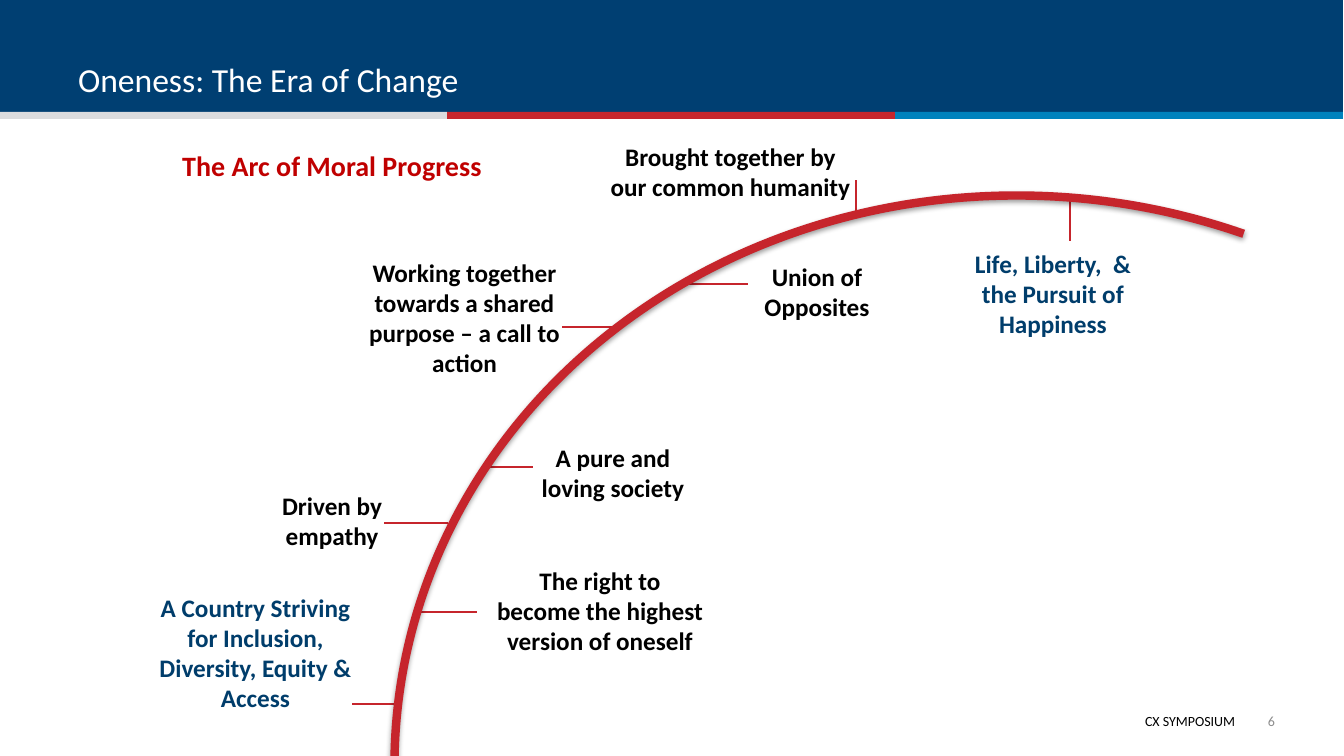
import lxml.etree
import pptx
import pptx.dml.color
import pptx.enum.shapes
import pptx.enum.text
import pptx.oxml
import pptx.oxml.ns
import pptx.util

PX = 914400 / 100.8
SHAPE = pptx.enum.shapes.MSO_SHAPE
ALIGN = pptx.enum.text.PP_ALIGN
ANCHOR = pptx.enum.text.MSO_ANCHOR
FIT = pptx.enum.text.MSO_AUTO_SIZE
RGB = pptx.dml.color.RGBColor.from_string

THEME = {
    "font": "Calibri",
    "header": RGB("003F72"),
    "stripes": [RGB("DBDCDE"), RGB("C6262D"), RGB("0082BD")],
    "arc": RGB("C6252C"),
    "heading": RGB("C00000"),
    "value": RGB("000000"),
    "ideal": RGB("003D6B"),
    "white": RGB("FFFFFF"),
    "number": RGB("8C8C8C"),
    "title_size": 24,
    "heading_size": 20,
    "label_size": 18,
    "footer_size": 10,
}


def px(*lengths):
    return [pptx.util.Emu(round(length * PX)) for length in lengths]


def write(holder, text, size, color, align, bold=False):
    frame = holder.text_frame
    frame.word_wrap = True
    frame.text = text
    paragraph = frame.paragraphs[0]
    paragraph.alignment = align
    paragraph.font.name = THEME["font"]
    paragraph.font.size = pptx.util.Pt(size)
    paragraph.font.bold = bold
    paragraph.font.color.rgb = color
    return frame


deck = pptx.Presentation()
deck.slide_width, deck.slide_height = px(1344, 756)
slide = deck.slides.add_slide(deck.slide_layouts[5])
shapes = slide.shapes

bands = [(-1, 0, 1344, 115, THEME["header"])]
for index, color in enumerate(THEME["stripes"]):
    bands.append((-1 + 448 * index, 112, 448, 7, color))
for left, top, width, height, color in bands:
    band = shapes.add_shape(SHAPE.RECTANGLE, *px(left, top, width, height))
    band.shadow.inherit = False
    band.fill.solid()
    band.fill.fore_color.rgb = color
    band.line.fill.background()

title = shapes.title
title.left, title.top, title.width, title.height = px(68, 14, 1210, 90)
title_frame = write(title, "Oneness: The Era of Change", THEME["title_size"], THEME["white"], ALIGN.LEFT)
title_frame.auto_size = FIT.NONE
title_frame.vertical_anchor = ANCHOR.BOTTOM
shapes._spTree.append(title._element)

milestones = [
    ("A Country Striving for Inclusion, Diversity, Equity & Access", "ideal", (136, 587, 239, 132), (399, 704, 352, 704)),
    ("The right to become the highest version of oneself", "value", (487, 560, 226, 102), (477, 612, 413, 612)),
    ("Driven by empathy", "value", (255, 485, 154, 72), (448, 523, 384, 523)),
    ("A pure and loving society", "value", (512, 437, 202, 72), (533, 467, 486, 467)),
    ("Working together towards a shared purpose – a call to action", "value", (354, 252, 221, 132), (613, 327, 562, 327)),
    ("Union of Opposites", "value", (740, 256, 154, 72), (748, 284, 684, 284)),
    ("Brought together by our common humanity", "value", (600, 136, 261, 72), (856, 213, 856, 180)),
    ("Life, Liberty,  & the Pursuit of Happiness", "ideal", (952, 243, 202, 102), (1070, 197, 1070, 241)),
]
for text, role, box, ends in milestones:
    tick = shapes.add_connector(pptx.enum.shapes.MSO_CONNECTOR.STRAIGHT, *px(*ends))
    tick.line.color.rgb = THEME["arc"]
    tick.line.width = pptx.util.Pt(2)
    lxml.etree.SubElement(tick._element.spPr, pptx.oxml.ns.qn("a:effectLst"))
    label = shapes.add_textbox(*px(*box))
    label_frame = write(label, text, THEME["label_size"], THEME[role], ALIGN.CENTER, True)
    label_frame.auto_size = FIT.SHAPE_TO_FIT_TEXT

arc = shapes.add_shape(SHAPE.ARC, *px(448, 142, 1160, 1268))
arc.rotation = 275.8
for index, degrees in enumerate((159.31, 15.89)):
    arc.adjustments[index] = degrees * 0.6
arc.fill.background()
arc.line.color.rgb = THEME["arc"]
arc.line.width = pptx.util.Pt(6)
arc._element.spPr.append(pptx.oxml.parse_xml(
    '<a:effectLst xmlns:a="http://schemas.openxmlformats.org/drawingml/2006/main">'
    '<a:outerShdw blurRad="40000" dist="20000" dir="5400000" rotWithShape="0">'
    '<a:srgbClr val="000000"><a:alpha val="38000"/></a:srgbClr>'
    '</a:outerShdw></a:effectLst>'
))

heading = shapes.add_textbox(*px(17, 144, 630, 44))
heading_frame = write(heading, "The Arc of Moral Progress", THEME["heading_size"], THEME["heading"], ALIGN.CENTER, True)
heading_frame.auto_size = FIT.SHAPE_TO_FIT_TEXT

footer = shapes.add_textbox(*px(555, 708, 690, 27))
write(footer, "CX SYMPOSIUM", THEME["footer_size"], THEME["value"], ALIGN.RIGHT)

page_number = shapes.add_textbox(*px(1239, 701, 36, 40))
number_frame = write(page_number, "6", THEME["footer_size"], THEME["number"], ALIGN.RIGHT)
number_frame.vertical_anchor = ANCHOR.MIDDLE
number_frame.margin_left = number_frame.margin_right = 0
number_frame.margin_top = number_frame.margin_bottom = 0

deck.save("out.pptx")
